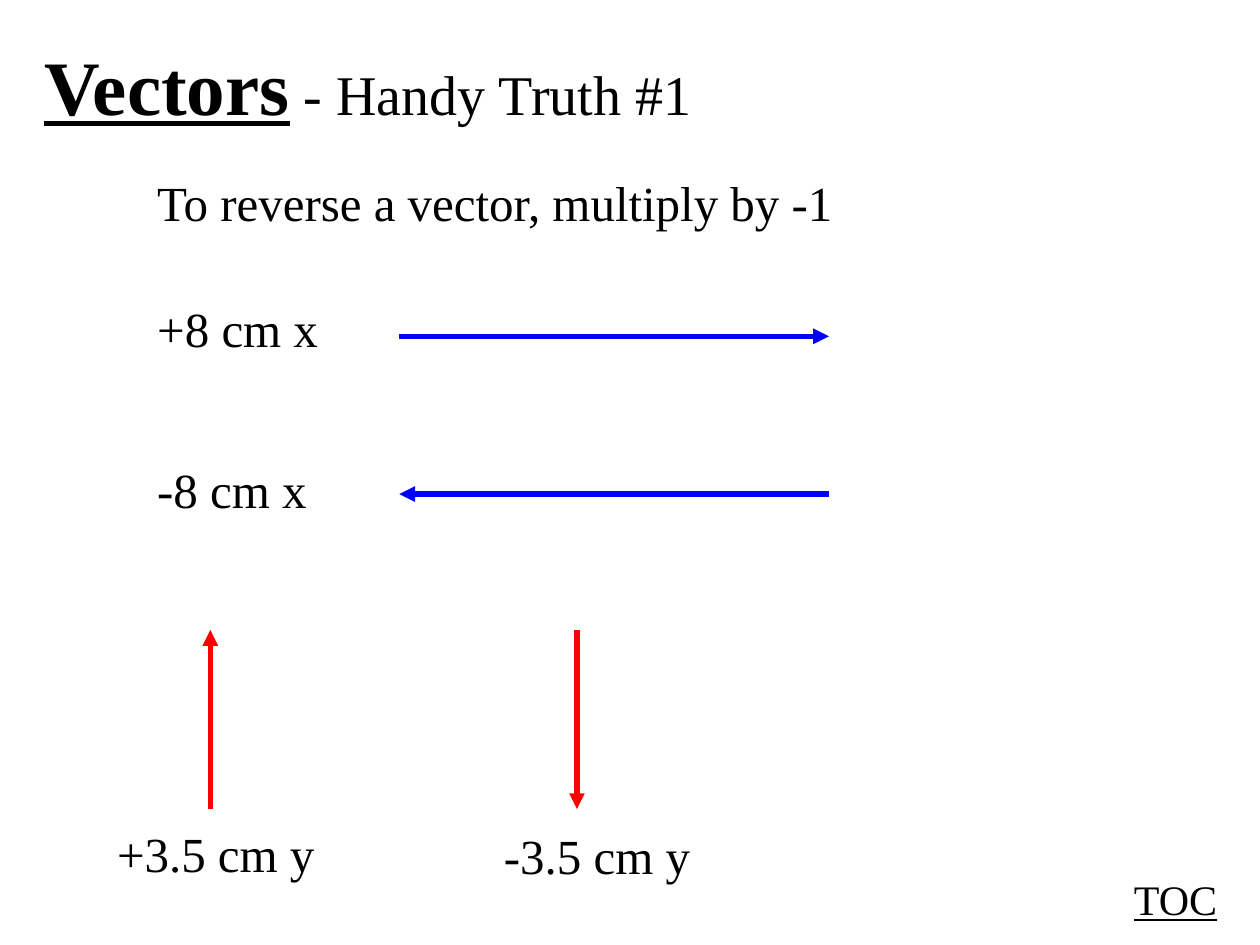
from lxml import etree
from pptx import Presentation
from pptx.dml.color import RGBColor
from pptx.enum.shapes import MSO_CONNECTOR
from pptx.enum.text import MSO_ANCHOR, MSO_AUTO_SIZE, PP_ALIGN
from pptx.oxml.ns import qn
from pptx.util import Cm, Pt

LINE = MSO_CONNECTOR.STRAIGHT
TOP = MSO_ANCHOR.TOP
LEFT = PP_ALIGN.LEFT
GROW = MSO_AUTO_SIZE.SHAPE_TO_FIT_TEXT
FONT = "Times New Roman"
COLORS = {"text": "000000", "x": "0000FF", "y": "FF0000"}

# Content: runs are (text, size, bold, underline); boxes are in cm
TITLE = [("Vectors", 44, True, True), (" - Handy Truth #1", 32, False, False)]
TITLE_BOX = (0.64, 0.64, 13.74, 2.11)
NOTES = [
    ("To reverse a vector, multiply by -1", 28, False, (2.92, 3.35, 14.25, 1.45)),
    ("TOC", 24, True, (22.61, 17.48, 2.21, 1.27)),
]

# Arrow spans shared by each axis
X_LOW, X_HIGH = 8.05, 16.71
Y_UP, Y_DOWN = 12.7, 16.31
# Label, axis, label box, arrow tail, arrow tip
VECTORS = [
    ("+8 cm x", "x", (2.92, 5.89, 3.76, 1.45), (X_LOW, 6.78), (X_HIGH, 6.78)),
    ("-8 cm x", "x", (2.92, 9.14, 3.53, 1.45), (X_HIGH, 9.96), (X_LOW, 9.96)),
    ("+3.5 cm y", "y", (2.11, 16.48, 4.5, 1.45), (4.24, Y_DOWN), (4.24, Y_UP)),
    ("-3.5 cm y", "y", (9.91, 16.51, 4.27, 1.45), (11.63, Y_UP), (11.63, Y_DOWN)),
]


def cms(nums):
    return [Cm(n) for n in nums]


def write(shape, runs):
    frame = shape.text_frame
    frame.word_wrap = False
    frame.auto_size = GROW
    frame.vertical_anchor = TOP
    para = frame.paragraphs[0]
    para.alignment = LEFT
    for text, size, bold, under in runs:
        run = para.add_run()
        run.text = text
        font = run.font
        font.name, font.size = FONT, Pt(size)
        font.bold, font.underline = bold, under
        font.color.rgb = RGBColor.from_string(COLORS["text"])


def label(shapes, text, size, under, box):
    write(shapes.add_textbox(*cms(box)), [(text, size, False, under)])


def arrow(shapes, tail, tip, color):
    line = shapes.add_connector(LINE, *cms(tail + tip))
    line.line.width = Pt(3)
    line.line.color.rgb = RGBColor.from_string(color)
    props = line.line._get_or_add_ln()
    etree.SubElement(props, qn("a:tailEnd"), type="triangle")
    etree.SubElement(props.getparent(), qn("a:effectLst"))


def main():
    deck = Presentation()
    deck.slide_width, deck.slide_height = Cm(25.4), Cm(19.05)
    slide = deck.slides.add_slide(deck.slide_layouts[5])
    shapes = slide.shapes

    # Title
    title = shapes.title
    title.left, title.top, title.width, title.height = cms(TITLE_BOX)
    write(title, TITLE)

    # Rule and contents label
    for note in NOTES:
        label(shapes, *note)

    # Each vector: arrow grouped with its label
    for text, axis, box, tail, tip in VECTORS:
        group = shapes.add_group_shape()
        arrow(group.shapes, tail, tip, COLORS[axis])
        label(group.shapes, text, 28, False, box)

    deck.save("out.pptx")


if __name__ == "__main__":
    main()
